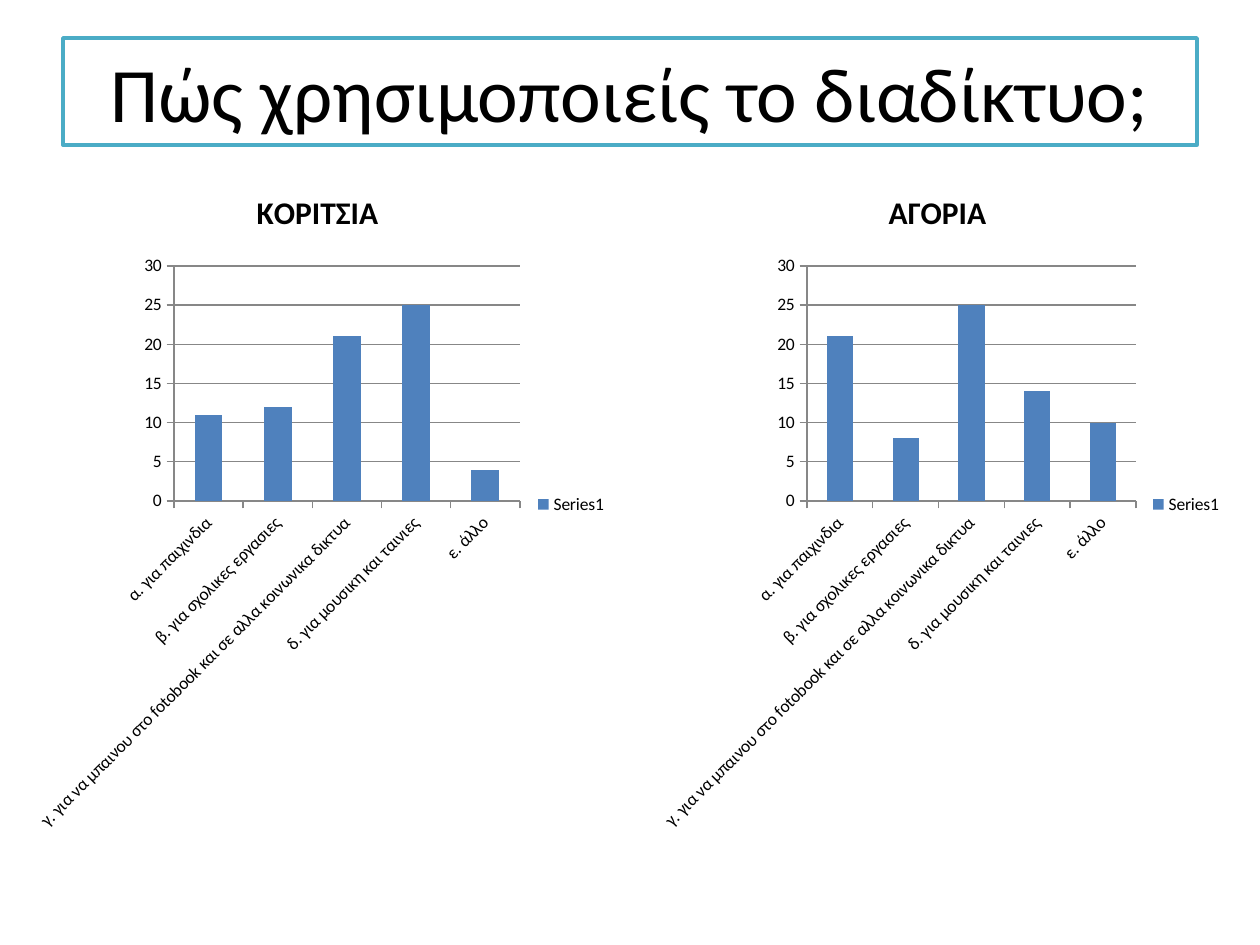
from dataclasses import dataclass

from lxml import etree
from pptx import Presentation
from pptx import util as u
from pptx.chart.data import CategoryChartData
from pptx.dml.color import RGBColor
from pptx.enum import chart as ch, text
from pptx.oxml.ns import qn

PX = 914400 / 126  # EMU in one px


@dataclass(frozen=True)
class Theme:
    font: str = "Calibri"
    ink: RGBColor = RGBColor(0x00, 0x00, 0x00)
    paper: RGBColor = RGBColor(0xFF, 0xFF, 0xFF)
    frame: RGBColor = RGBColor(0x4B, 0xAC, 0xC6)
    bar: RGBColor = RGBColor(0x4F, 0x81, 0xBD)
    grid: RGBColor = RGBColor(0x87, 0x87, 0x87)
    title_size: int = 44
    chart_title_size: int = 18
    label_size: int = 10


THEME = Theme()
TITLE_BOX = (63, 38, 1134, 107)
USES = (
    "α. για παιχινδια",
    "β. για σχολικες εργασιες",
    "γ. για να μπαινου στο fotobook και σε αλλα κοινωνικα δικτυα",
    "δ. για μουσικη και ταινιες",
    "ε. άλλο",
)
# Chart title, answers, chart box, plot area inside that box
CHARTS = (
    ("ΚΟΡΙΤΣΙΑ", (11, 12, 21, 25, 4), (15, 165, 605, 679), (159, 101, 346, 235)),
    ("ΑΓΟΡΙΑ", (21, 8, 25, 14, 10), (640, 165, 595, 679), (167, 101, 329, 235)),
)


def emu(box):
    return [u.Emu(round(length * PX)) for length in box]


def style_font(font, size, bold=False):
    font.name = THEME.font
    font.size = u.Pt(size)
    font.bold = bold
    font.color.rgb = THEME.ink


def add_title(page, box, wording):
    """Framed slide title in the title placeholder."""
    title = page.shapes.title
    title.left, title.top, title.width, title.height = emu(box)
    title.fill.solid()
    title.fill.fore_color.rgb = THEME.paper
    title.line.color.rgb = THEME.frame
    title.line.width = u.Pt(2)
    frame = title.text_frame
    frame.text = wording
    frame.vertical_anchor = text.MSO_ANCHOR.MIDDLE
    para = frame.paragraphs[0]
    para.alignment = text.PP_ALIGN.CENTER
    style_font(para.runs[0].font, THEME.title_size)


def set_plot_area(chart, box, plot):
    """Fix the inner plot area as fractions of the chart box."""
    area = chart.element.find(".//" + qn("c:plotArea"))
    layout = area.find(qn("c:layout"))
    if layout is None:
        layout = etree.Element(qn("c:layout"))
        area.insert(0, layout)
    manual = etree.SubElement(layout, qn("c:manualLayout"))
    settings = [("layoutTarget", "inner"), ("xMode", "edge"), ("yMode", "edge")]
    sizes = (box[2], box[3]) * 2
    settings += [(key, f"{part / whole:.4f}")
                 for key, part, whole in zip("xywh", plot, sizes)]
    for key, value in settings:
        etree.SubElement(manual, qn("c:" + key)).set("val", value)


def style_axes(chart):
    for axis in (chart.category_axis, chart.value_axis):
        axis.major_tick_mark = ch.XL_TICK_MARK.OUTSIDE
        axis.minor_tick_mark = ch.XL_TICK_MARK.NONE
        axis.format.line.color.rgb = THEME.grid
        style_font(axis.tick_labels.font, THEME.label_size)
    # Slanted category labels
    labels = chart.category_axis._element.find(qn("c:txPr"))
    labels.find(qn("a:bodyPr")).set("rot", "-2700000")

    values = chart.value_axis
    values.minimum_scale, values.maximum_scale, values.major_unit = 0, 30, 5
    values.has_major_gridlines = True
    values.major_gridlines.format.line.color.rgb = THEME.grid


def add_answers_chart(page, heading, answers, box, plot):
    """Column chart of one group's answers, with heading and legend."""
    data = CategoryChartData()
    data.categories = USES
    data.add_series("Series1", answers)
    chart = page.shapes.add_chart(
        ch.XL_CHART_TYPE.COLUMN_CLUSTERED, *emu(box), data).chart
    style_font(chart.font, THEME.label_size)

    # Heading
    chart.has_title = True
    frame = chart.chart_title.text_frame
    frame.text = heading
    style_font(frame.paragraphs[0].runs[0].font, THEME.chart_title_size, True)
    chart.chart_title.include_in_layout = False

    # Legend
    chart.has_legend = True
    chart.legend.position = ch.XL_LEGEND_POSITION.RIGHT
    chart.legend.include_in_layout = False
    style_font(chart.legend.font, THEME.label_size)

    # Columns
    columns = chart.plots[0]
    columns.gap_width = 150
    columns.vary_by_categories = False
    fill = columns.series[0].format.fill
    fill.solid()
    fill.fore_color.rgb = THEME.bar

    style_axes(chart)
    set_plot_area(chart, box, plot)


def main():
    deck = Presentation()
    deck.slide_width, deck.slide_height = emu((1260, 945))
    page = deck.slides.add_slide(deck.slide_layouts[5])
    add_title(page, TITLE_BOX, "Πώς χρησιμοποιείς το διαδίκτυο;")
    for chart in CHARTS:
        add_answers_chart(page, *chart)
    deck.save("out.pptx")


if __name__ == "__main__":
    main()
